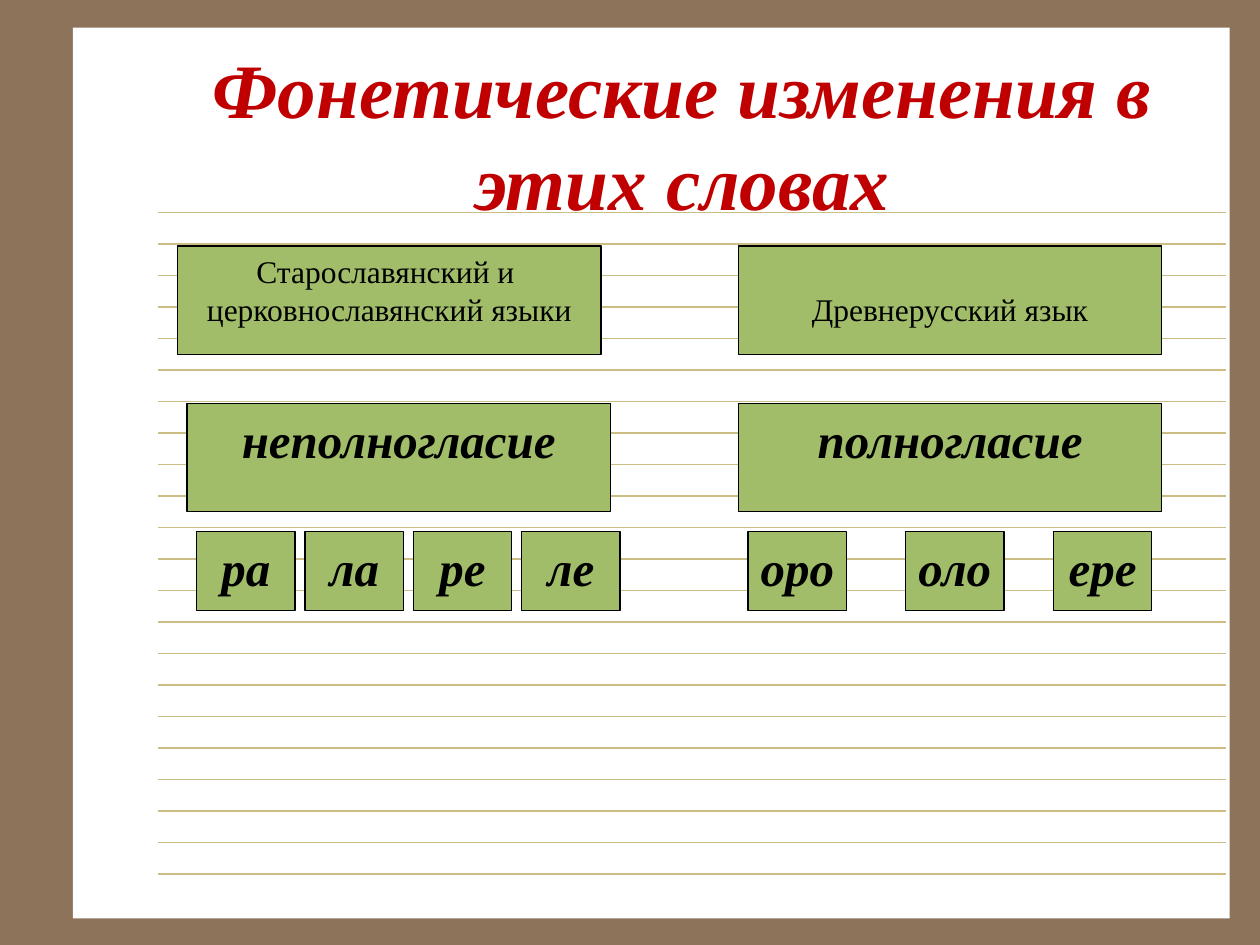
from lxml import etree
from pptx import Presentation
from pptx.dml.color import RGBColor
from pptx.enum.shapes import MSO_CONNECTOR, MSO_SHAPE
from pptx.enum.text import MSO_ANCHOR, PP_ALIGN
from pptx.oxml.ns import qn
from pptx.util import Pt

RECTANGLE = MSO_SHAPE.RECTANGLE
STRAIGHT = MSO_CONNECTOR.STRAIGHT
MIDDLE, TOP = MSO_ANCHOR.MIDDLE, MSO_ANCHOR.TOP
CENTER = PP_ALIGN.CENTER

BROWN = RGBColor(0x8C, 0x73, 0x5A)
WHITE = RGBColor(0xFF, 0xFF, 0xFF)
RULE = RGBColor(0xCB, 0xBD, 0x83)
RED = RGBColor(0xC0, 0x00, 0x00)
GREEN = RGBColor(0xA1, 0xBD, 0x69)
BLACK = RGBColor(0x00, 0x00, 0x00)
FONT = "Times New Roman"


def write_lines(frame, lines, size, color, emphasis):
    """Write centred paragraphs; emphasis makes them bold italic."""
    for number, line in enumerate(lines):
        paragraph = frame.add_paragraph() if number else frame.paragraphs[0]
        paragraph.alignment = CENTER
        run = paragraph.add_run()
        run.text = line
        run.font.name = FONT
        run.font.size = Pt(size)
        run.font.bold = run.font.italic = emphasis
        run.font.color.rgb = color


def add_box(left, top, width, height, lines, size=28, emphasis=True, inset=3.6):
    box = slide.shapes.add_shape(RECTANGLE, Pt(left), Pt(top), Pt(width), Pt(height))
    box.shadow.inherit = False
    box.fill.solid()
    box.fill.fore_color.rgb = GREEN
    box.line.color.rgb = BLACK
    box.line.width = Pt(0.75)
    frame = box.text_frame
    frame.word_wrap = False
    frame.vertical_anchor = TOP
    frame.margin_top = Pt(inset)
    write_lines(frame, lines, size, BLACK, emphasis)


presentation = Presentation()
presentation.slide_width, presentation.slide_height = Pt(720), Pt(540)
slide = presentation.slides.add_slide(presentation.slide_layouts[6])
slide.background.fill.solid()
slide.background.fill.fore_color.rgb = BROWN

# Ruled notebook page
page = slide.shapes.add_shape(RECTANGLE, Pt(41.7), Pt(15.8), Pt(661), Pt(509))
page.shadow.inherit = False
page.fill.solid()
page.fill.fore_color.rgb = WHITE
page.line.fill.background()
for row in range(22):
    y = Pt(121.5 + 18 * row)
    rule = slide.shapes.add_connector(STRAIGHT, Pt(90.5), y, Pt(700.4), y)
    rule.line.color.rgb = RULE
    rule.line.width = Pt(0.75)
    etree.SubElement(rule._element.spPr, qn("a:effectLst"))

title = slide.shapes.add_textbox(Pt(84), Pt(31.5), Pt(612), Pt(90))
title.text_frame.word_wrap = True
title.text_frame.vertical_anchor = MIDDLE
write_lines(title.text_frame, ["Фонетические изменения в этих словах"], 44, RED, True)

# Languages and their sound patterns
WIDE, TALL = 242, 62
LANGUAGE_TOP, PATTERN_TOP, SYLLABLE_TOP = 140.5, 230.5, 303.8
RIGHT_COLUMN = 421.9
add_box(101.5, LANGUAGE_TOP, WIDE, TALL,
        ["Старославянский и ", "церковнославянский языки"], 18, False)
add_box(RIGHT_COLUMN, LANGUAGE_TOP, WIDE, TALL, ["Древнерусский язык"], 18, False, 25)
add_box(106.8, PATTERN_TOP, WIDE, TALL, ["неполногласие"])
add_box(RIGHT_COLUMN, PATTERN_TOP, WIDE, TALL, ["полногласие"])

syllables = [("ра", 112.4), ("ла", 174.3), ("ре", 236.2), ("ле", 298.1),
             ("оро", 427.5), ("оло", 517.5), ("ере", 602)]
for syllable, left in syllables:
    add_box(left, SYLLABLE_TOP, 56.2, 45, [syllable])

presentation.save("out.pptx")
